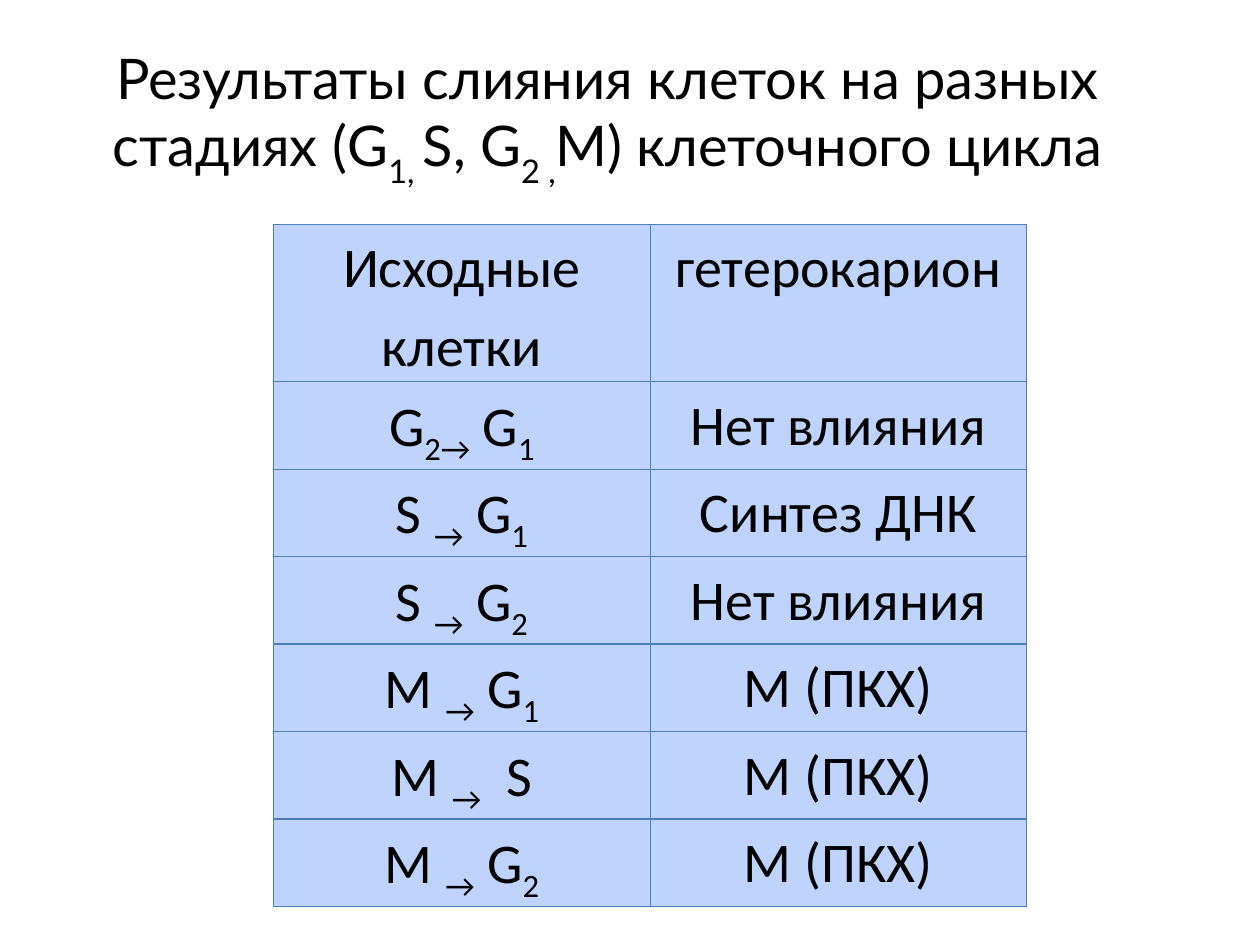
from typing import NamedTuple

from lxml.etree import SubElement
from pptx import Presentation
from pptx.dml.color import RGBColor
from pptx.enum.text import MSO_ANCHOR, MSO_AUTO_SIZE, PP_ALIGN
from pptx.oxml.ns import qn
from pptx.util import Inches, Pt

BLACK, BORDER, CELL_FILL = "000000", "4B7EBC", "BFD3FF"


class Fusion(NamedTuple):
    cells: str
    heterokaryon: str


# Text between underscores is subscript
TITLE = "Результаты слияния клеток на разных стадиях (G_1, _S, G_2 ,_M) клеточного цикла"
FUSIONS = [
    Fusion("Исходные клетки", "гетерокарион"),
    Fusion("G_2→_ G_1_", "Нет влияния"),
    Fusion("S _→_ G_1_", "Синтез ДНК"),
    Fusion("S _→_ G_2_", "Нет влияния"),
    Fusion("M _→_ G_1_", "М (ПКХ)"),
    Fusion("M _→_  S", "М (ПКХ)"),
    Fusion("M _→_ G_2_", "М (ПКХ)"),
]


def color(value: str) -> RGBColor:
    return RGBColor.from_string(value)


def write(frame, text: str, *, font: str, drop: int, spacing: float | None = None,
          size: int = 32) -> None:
    """Write one centred paragraph, lowering the subscripts by drop percent."""
    para = frame.paragraphs[0]
    para.alignment = PP_ALIGN.CENTER
    if spacing:
        para.line_spacing = spacing
    for index, part in enumerate(text.split("_")):
        if not part:
            continue
        span = para.add_run()
        span.text = part
        span.font.name, span.font.size = font, Pt(size)
        span.font.bold = False
        span.font.color.rgb = color(BLACK)
        if index % 2:
            span.font._element.set("baseline", str(-drop * 1000))


def outline(cell, line_color: str, width: float) -> None:
    properties = cell._tc.get_or_add_tcPr()
    for side in ("lnL", "lnR", "lnT", "lnB"):
        line = SubElement(properties, qn(f"a:{side}"), w=str(Pt(width)))
        fill = SubElement(line, qn("a:solidFill"))
        SubElement(fill, qn("a:srgbClr"), val=line_color)


def draw_cell(cell, text: str) -> None:
    cell.margin_left = cell.margin_right = Inches(0.07)
    cell.margin_top = cell.margin_bottom = 0
    outline(cell, BORDER, 0.75)
    cell.fill.solid()
    cell.fill.fore_color.rgb = color(CELL_FILL)
    write(cell.text_frame, text, font="Calibri", drop=25, spacing=1.15)


def draw_title(page) -> None:
    title = page.shapes.title
    title.left, title.top = Inches(0), Inches(0.3)
    title.width, title.height = Inches(9.65), Inches(1.25)
    frame = title.text_frame
    frame.auto_size = MSO_AUTO_SIZE.NONE
    frame.word_wrap = True
    frame.vertical_anchor = MSO_ANCHOR.MIDDLE
    write(frame, TITLE, font="Lato", drop=30)


def draw_table(page) -> None:
    table = page.shapes.add_table(len(FUSIONS), 2, Inches(2.17), Inches(1.78),
                                  Inches(5.98), Inches(5.36)).table
    table.first_row = table.horz_banding = False
    for column in table.columns:
        column.width = Inches(2.99)
    for index, (row, fusion) in enumerate(zip(table.rows, FUSIONS)):
        row.height = Inches(0.69 if index else 1.22)
        for cell, text in zip(row.cells, fusion):
            draw_cell(cell, text)


def main() -> None:
    deck = Presentation()
    deck.slide_width, deck.slide_height = Inches(10), Inches(7.5)
    page = deck.slides.add_slide(deck.slide_layouts[5])  # Title Only
    draw_title(page)
    draw_table(page)
    deck.save("out.pptx")


if __name__ == "__main__":
    main()
